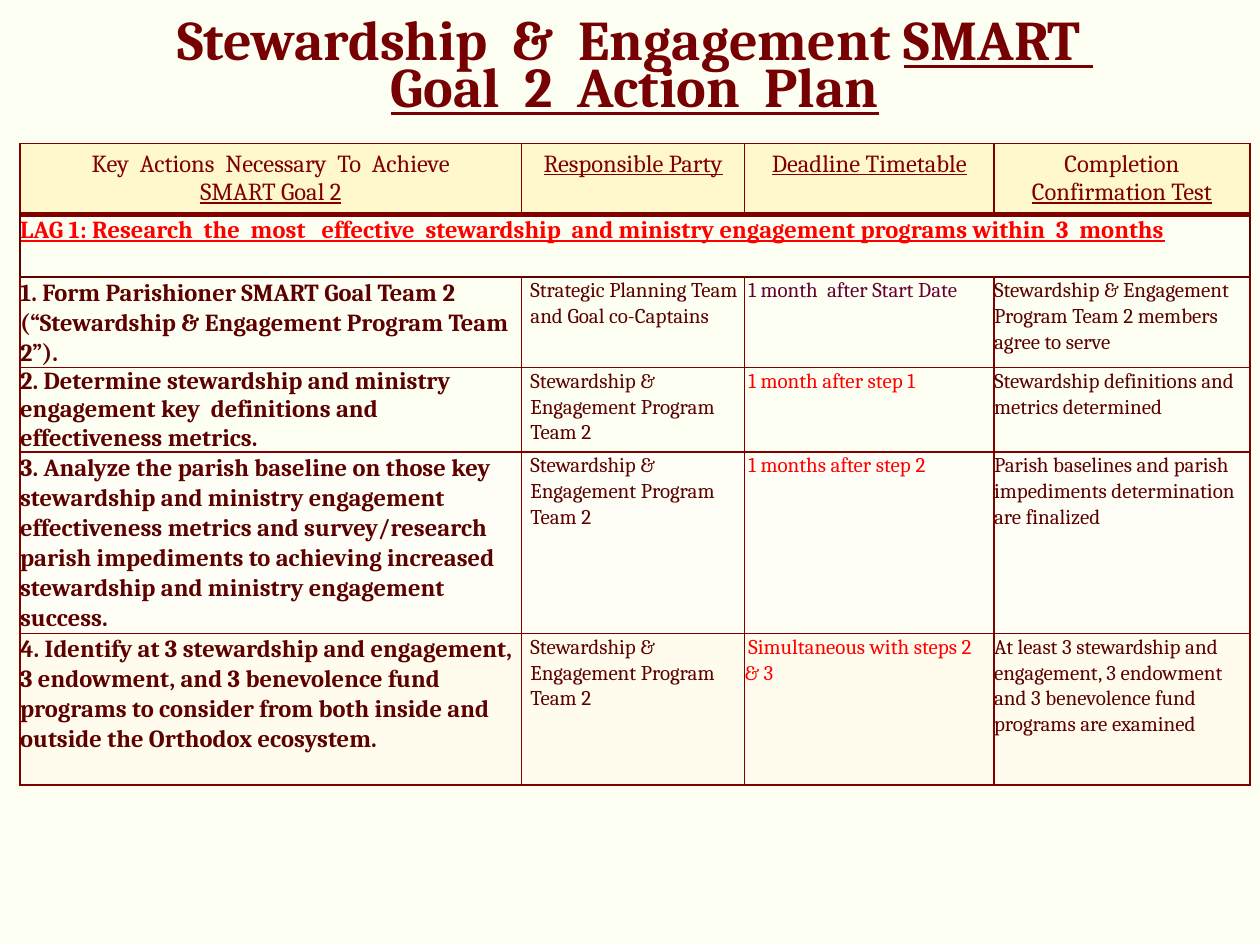
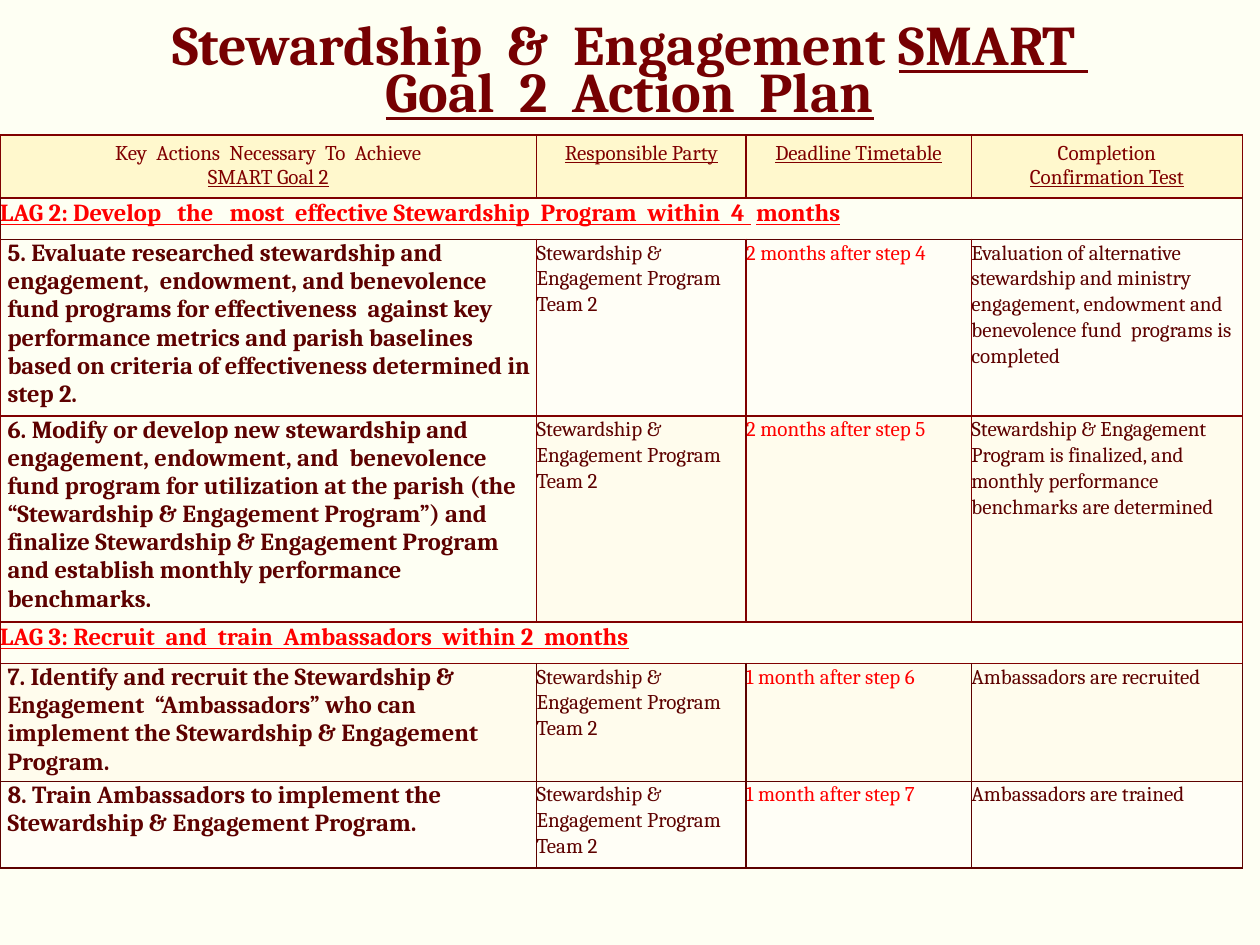
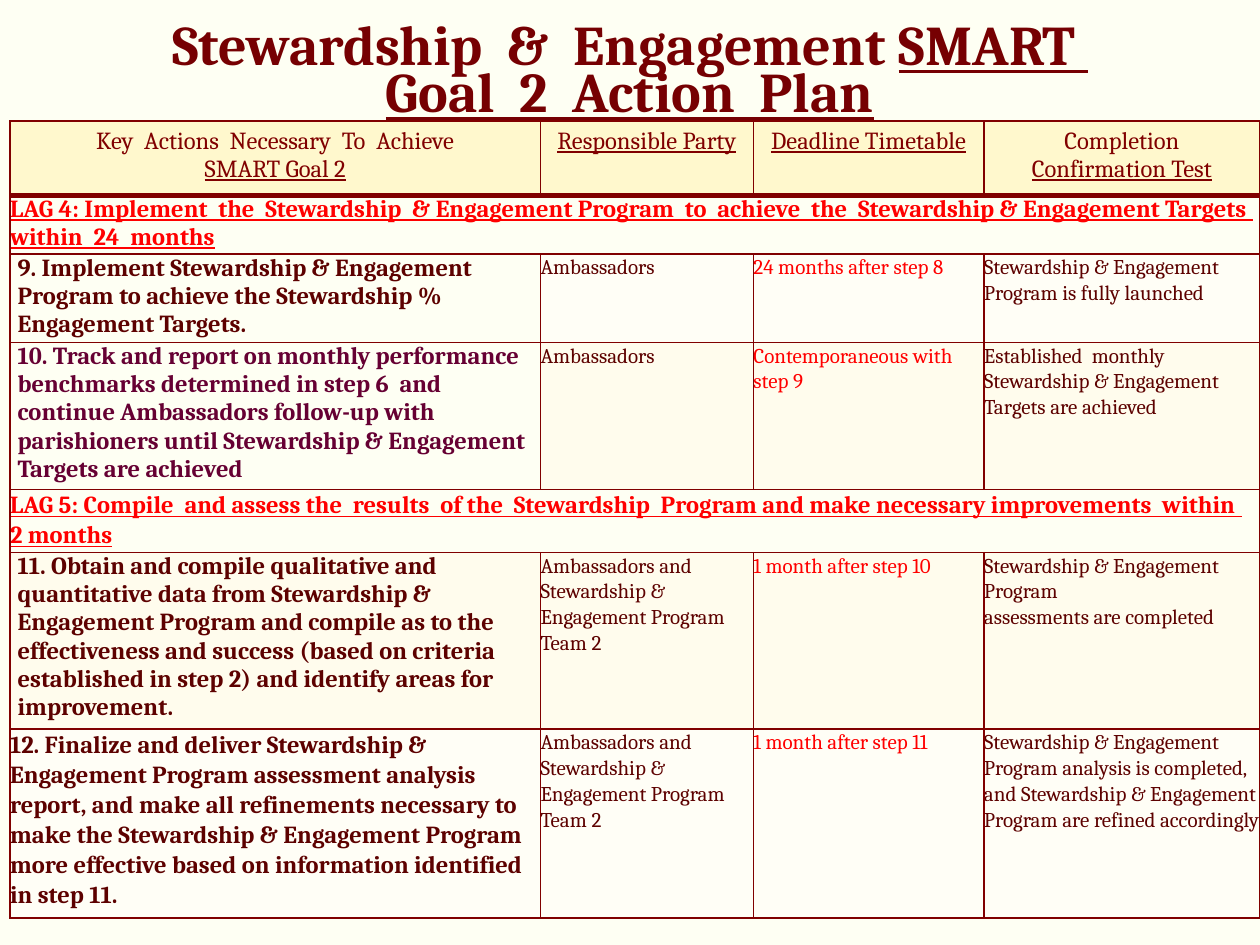
"""Build three action-plan table slides for Stewardship & Engagement SMART Goal 2."""
from dataclasses import dataclass

from lxml import etree
from pptx import Presentation
from pptx import util as u
from pptx.dml.color import RGBColor
from pptx.enum import text
from pptx.oxml import ns


@dataclass(frozen=True)
class Theme:
    font: str = "Cambria"
    page: str = "FEFFF3"
    title: str = "760002"
    line: str = "800000"
    ink: str = "5D0100"
    red: str = "FF0000"
    plum: str = "660033"
    header: str = "FFF8CD"
    pale: str = "FFFEF6"
    cream: str = "FFFCED"
    title_size: int = 32
    key_size: int = 14
    body_size: int = 12
    loose: float = 1.07


@dataclass
class Lag:
    height: float
    goal: str
    edge: str = Theme.line
    spacing: float = Theme.loose


@dataclass
class Step:
    height: float
    key: str
    party: str
    deadline: str
    test: str
    fill: str = None
    key_fill: str = None
    edge: str = Theme.line
    spacing: float = 1.0
    indent: float = 0.06
    key_color: str = Theme.ink
    deadline_color: str = Theme.red


@dataclass
class Plan:
    title_at: tuple
    table_at: tuple
    columns: tuple
    header_height: float
    header_size: int
    header_rule: int
    rows: list
    party_indent: float = 0
    deadline_indent: float = 0


theme = Theme()
TEAM = "Stewardship & Engagement Program Team 2"
AMBASSADORS = "Ambassadors and " + TEAM
HEADINGS = (
    ("Key  Actions  Necessary  To  Achieve", "SMART Goal 2"),
    ("Responsible Party",),
    ("Deadline Timetable",),
    ("Completion", "Confirmation Test"),
)

plans = [
    Plan((1.13, -0.07), (0.16, 1.14), (3.98, 1.77, 1.98, 2.03), 0.56, 14, 3, [
        Lag(0.5, "LAG 1: Research  the  most   effective  stewardship  and ministry engagement "
            "programs within  3  months", edge=theme.ink),
        Step(0.71, "1. Form Parishioner SMART Goal Team 2 (“Stewardship & Engagement Program "
             "Team 2”).", "Strategic Planning Team and Goal co-Captains",
             "1 month  after Start Date",
             "Stewardship & Engagement Program Team 2 members agree to serve",
             spacing=theme.loose, indent=0, deadline_color=theme.plum),
        Step(0.67, "2. Determine stewardship and ministry engagement key  definitions and "
             "effectiveness metrics.", TEAM, "1 month after step 1",
             "Stewardship definitions and metrics determined", indent=0),
        Step(1.44, "3. Analyze the parish baseline on those key stewardship and ministry "
             "engagement effectiveness metrics and survey/research parish impediments to "
             "achieving increased stewardship and ministry engagement success.",
             TEAM, "1 months after step 2",
             "Parish baselines and parish impediments determination are finalized",
             theme.pale, theme.pale, spacing=theme.loose, indent=0),
        Step(1.2, "4. Identify at 3 stewardship and engagement, 3 endowment, and 3 benevolence "
             "fund programs to consider from both inside and outside the Orthodox ecosystem.",
             TEAM, "Simultaneous with steps 2\v& 3",
             "At least 3 stewardship and engagement, 3 endowment and 3 benevolence fund "
             "programs are examined",
             theme.cream, theme.cream, spacing=theme.loose, indent=0),
    ], party_indent=0.07, deadline_indent=0.03),
    Plan((1.09, -0.03), (0, 1.07), (4.26, 1.66, 1.79, 2.15), 0.48, 12, 1, [
        Lag(0.33, "LAG 2: Develop   the   most  effective Stewardship  Program  within  4 \tmonths",
            edge=theme.ink),
        Step(1.34, "5. Evaluate researched stewardship and engagement,  endowment, and "
             "benevolence fund programs for effectiveness  against key performance metrics and "
             "parish baselines based on criteria of effectiveness determined in step 2.",
             TEAM, "2 months after step 4",
             "Evaluation of alternative stewardship and ministry engagement, endowment and "
             "benevolence fund  programs is completed", theme.pale),
        Step(1.56, "6. Modify or develop new stewardship and engagement, endowment, and  "
             "benevolence fund program for utilization at the parish (the “Stewardship & "
             "Engagement Program”) and finalize Stewardship & Engagement Program and establish "
             "monthly performance benchmarks.", TEAM, "2 months after step 5",
             "Stewardship & Engagement Program is finalized, and monthly performance "
             "benchmarks are determined", theme.cream),
        Lag(0.33, "LAG 3: Recruit  and  train  Ambassadors  within 2  months"),
        Step(0.89, "7. Identify and recruit the Stewardship & Engagement  “Ambassadors” who can "
             "implement the Stewardship & Engagement Program.", TEAM, "1 month after step 6",
             "Ambassadors are recruited", theme.cream, theme.cream, theme.ink),
        Step(0.69, "8. Train Ambassadors to implement the Stewardship & Engagement Program.",
             TEAM, "1 month after step 7", "Ambassadors are trained",
             theme.pale, theme.pale, theme.ink),
    ]),
    Plan((1.09, -0.03), (0.08, 0.96), (4.21, 1.69, 1.83, 2.19), 0.59, 14, 3, [
        Lag(0.45, "LAG 4: Implement  the  Stewardship  & Engagement Program  to  achieve  the  "
            "Stewardship & Engagement Targets  within  24  months", spacing=1.0),
        Step(0.67, "9. Implement Stewardship & Engagement Program to achieve the Stewardship % "
             "Engagement Targets.", "Ambassadors", "24 months after step 8",
             "Stewardship & Engagement Program is fully launched", theme.pale),
        Step(1.12, "10. Track and report on monthly performance benchmarks determined in step 6  "
             "and continue Ambassadors follow-up with parishioners until Stewardship & "
             "Engagement Targets are achieved", "Ambassadors", "Contemporaneous with step 9",
             "Established  monthly Stewardship & Engagement Targets are achieved",
             theme.cream, key_color=theme.plum),
        Lag(0.48, "LAG 5: Compile  and assess the  results  of the  Stewardship  Program and make "
            "necessary improvements  within  2 months"),
        Step(1.34, "11. Obtain and compile qualitative and quantitative data from Stewardship & "
             "Engagement Program and compile as to the effectiveness and success (based on "
             "criteria established in step 2) and identify areas for improvement.",
             AMBASSADORS, "1 month after step 10",
             "Stewardship & Engagement Program\vassessments are completed",
             theme.cream, theme.cream),
        Step(1.43, "12. Finalize and deliver Stewardship & Engagement Program assessment analysis "
             "report, and make all refinements necessary to make the Stewardship & Engagement "
             "Program more effective based on information identified in step 11.",
             AMBASSADORS, "1 month after step 11",
             "Stewardship & Engagement Program analysis is completed, and Stewardship & "
             "Engagement Program are refined accordingly",
             theme.pale, theme.pale, spacing=theme.loose, indent=0),
    ]),
]


def style_cell(cell, fill, edges, inset=0):
    """Set the margins, the four borders and the fill of a cell."""
    cell.margin_left = cell.margin_right = u.Inches(inset)
    cell.margin_top = cell.margin_bottom = u.Inches(inset)
    properties = cell._tc.get_or_add_tcPr()
    for side, (color, width) in zip("LRTB", edges):
        line = etree.SubElement(properties, ns.qn(f"a:ln{side}"), w=str(u.Pt(width)))
        solid = etree.SubElement(line, ns.qn("a:solidFill"))
        etree.SubElement(solid, ns.qn("a:srgbClr"), val=color)
    if fill:
        cell.fill.solid()
        cell.fill.fore_color.rgb = RGBColor.from_string(fill)
    else:
        cell.fill.background()


def style_para(para, size, color, bold=False, underline=False, spacing=1.0, left=0, first=0):
    """Set the spacing, indents and font of a paragraph."""
    para.line_spacing = spacing
    properties = para._p.get_or_add_pPr()
    properties.set("marL", str(u.Inches(left)))
    properties.set("indent", str(u.Inches(first)))
    para.font.name = theme.font
    para.font.size = u.Pt(size)
    para.font.color.rgb = RGBColor.from_string(color)
    para.font.bold = bold
    para.font.underline = underline


deck = Presentation()
deck.slide_width, deck.slide_height = u.Inches(10), u.Inches(7.5)

for plan in plans:
    page = deck.slides.add_slide(deck.slide_layouts[6])
    page.background.fill.solid()
    page.background.fill.fore_color.rgb = RGBColor.from_string(theme.page)

    heights = [plan.header_height] + [row.height for row in plan.rows]
    left, top = plan.table_at
    table = page.shapes.add_table(
        len(heights), len(plan.columns), u.Inches(left), u.Inches(top),
        u.Inches(sum(plan.columns)), u.Inches(sum(heights))).table
    table.first_row = table.horz_banding = False
    for column, width in zip(table.columns, plan.columns):
        column.width = u.Inches(width)
    for table_row, height in zip(table.rows, heights):
        table_row.height = u.Inches(height)

    side = (theme.line, 1)
    above = (theme.line, plan.header_rule)
    for cell, lines in zip(table.rows[0].cells, HEADINGS):
        style_cell(cell, theme.header, (side, side, side, above), 0.05)
        cell.text = "\n".join(lines)
        for para, line in zip(cell.text_frame.paragraphs, lines):
            style_para(para, plan.header_size, theme.line, underline=line == lines[-1])
            para.alignment = text.PP_ALIGN.CENTER

    for index, row in enumerate(plan.rows, 1):
        cells = list(table.rows[index].cells)
        side = (row.edge, 1)
        edges = (side, side, above, side)
        above = side
        if isinstance(row, Lag):
            for cell in cells:
                style_cell(cell, None, edges)
            cells[0].merge(cells[-1])
            cells[0].text = row.goal
            style_para(cells[0].text_frame.paragraphs[0], theme.key_size, theme.red,
                       True, True, row.spacing)
            continue
        entries = (
            (row.key, row.key_fill, theme.key_size, row.key_color, True, row.spacing,
             row.indent, 0),
            (row.party, row.fill, theme.body_size, theme.ink, False, theme.loose,
             plan.party_indent, 0),
            (row.deadline, row.fill, theme.body_size, row.deadline_color, False, theme.loose,
             0, plan.deadline_indent),
            (row.test, row.fill, theme.body_size, theme.ink, False, theme.loose, 0, 0),
        )
        for cell, (words, fill, size, color, bold, spacing, indent, first) in zip(cells, entries):
            style_cell(cell, fill, edges)
            cell.text = words
            style_para(cell.text_frame.paragraphs[0], size, color, bold, False, spacing,
                       indent, first)

    left, top = plan.title_at
    box = page.shapes.add_textbox(u.Inches(left), u.Inches(top), u.Inches(7.82), u.Inches(1.25))
    box.text_frame.word_wrap = True
    box.text_frame.vertical_anchor = text.MSO_ANCHOR.MIDDLE
    para = box.text_frame.paragraphs[0]
    style_para(para, theme.title_size, theme.title, bold=True, spacing=0.7)
    para.alignment = text.PP_ALIGN.CENTER
    para.add_run().text = "Stewardship  &  Engagement "
    span = para.add_run()
    span.text = "SMART  Goal  2  Action  Plan"
    span.font.underline = True

deck.save("out.pptx")
